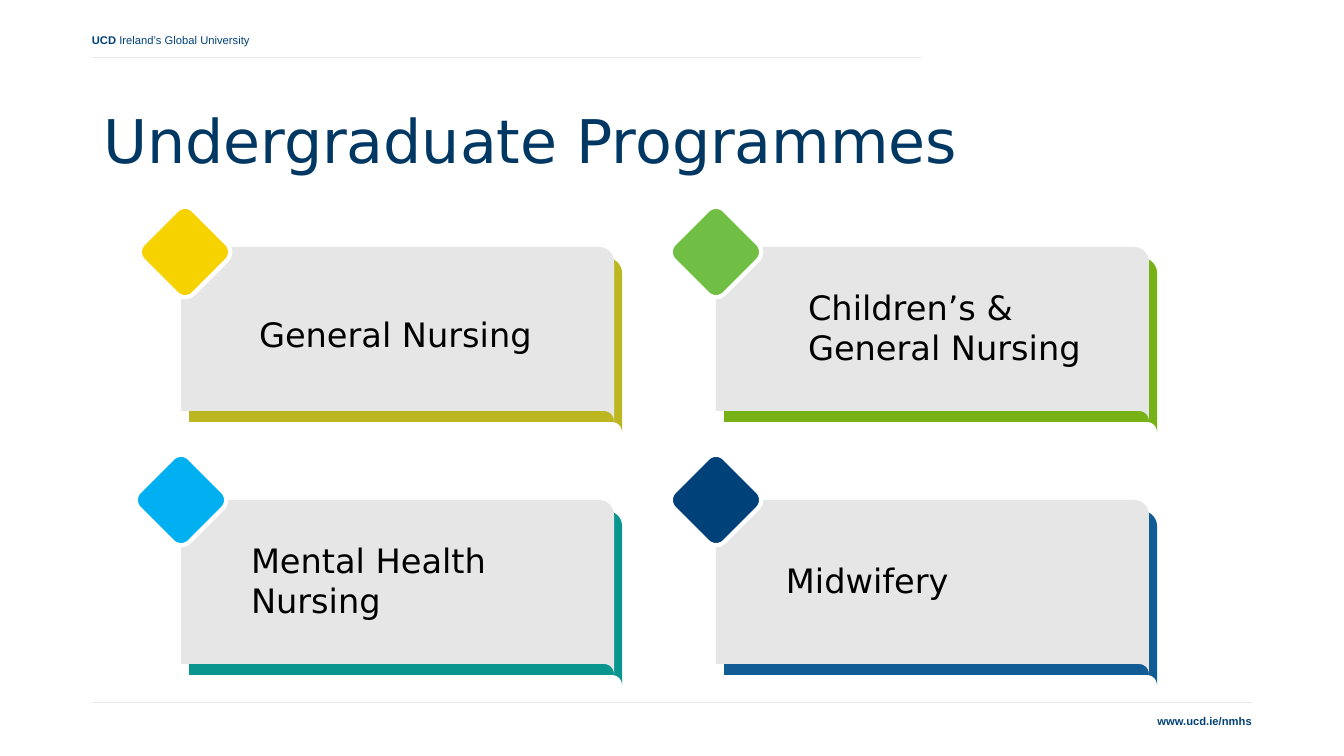
import math
from dataclasses import dataclass

import pptx
import pptx.dml.color
import pptx.enum.shapes
import pptx.enum.text
import pptx.oxml.ns
import pptx.util
from lxml import etree

EMU_PER_PX = 914400 / 100.8
SHAPES = pptx.enum.shapes.MSO_SHAPE
ANCHOR = pptx.enum.text.MSO_ANCHOR
ALIGN = pptx.enum.text.PP_ALIGN


@dataclass(frozen=True)
class Theme:
    brand: str = "004179"
    title: str = "003863"
    ink: str = "000000"
    panel: str = "E7E6E6"
    white: str = "FFFFFF"
    body_font: str = "DejaVu Sans"
    small_font: str = "Arial"
    title_size: int = 43
    label_size: int = 24
    small_size: int = 8
    rule_width: float = 0.5
    diamond_outline: int = 3


def px(length):
    return pptx.util.Emu(round(length * EMU_PER_PX))


def rgb(color):
    return pptx.dml.color.RGBColor.from_string(color)


def arc(center_x, center_y, radius, steps=12):
    """Points of a quarter circle from its top to its right-hand end."""
    angles = [math.pi / 2 * step / steps for step in range(steps + 1)]
    return [(center_x + radius * math.sin(angle), center_y - radius * math.cos(angle))
            for angle in angles]


class Page:
    def __init__(self, deck, theme):
        self.theme = theme
        self.slide = deck.slides.add_slide(deck.slide_layouts[5])
        self.shapes = self.slide.shapes

    def span(self, para, text, font, size, color, bold=False):
        span = para.add_run()
        span.text = text
        span.font.name = font
        span.font.size = pptx.util.Pt(size)
        span.font.bold = bold
        span.font.color.rgb = rgb(color)

    def frame(self, box, align=ALIGN.LEFT):
        """Set up the text frame of a box and return its first paragraph."""
        frame = box.text_frame
        frame.word_wrap = True
        frame.auto_size = pptx.enum.text.MSO_AUTO_SIZE.NONE
        frame.vertical_anchor = ANCHOR.MIDDLE
        para = frame.paragraphs[0]
        para.alignment = align
        return para

    def title(self, text, left, top, width, height):
        box = self.shapes.title
        box.left, box.top, box.width, box.height = map(px, (left, top, width, height))
        para = self.frame(box)
        para.line_spacing = 0.9
        self.span(para, text, self.theme.body_font, self.theme.title_size, self.theme.title)

    def small_print(self, spans, left, top, align):
        """Header or footer text, given as (text, bold) pairs."""
        box = self.shapes.add_textbox(px(left), px(top), px(454), px(40))
        para = self.frame(box, align)
        for text, bold in spans:
            self.span(para, text, self.theme.small_font, self.theme.small_size,
                      self.theme.brand, bold)

    def label(self, text, left, top):
        box = self.shapes.add_textbox(px(left), px(top), px(303), px(74))
        para = self.frame(box)
        frame = box.text_frame
        frame.margin_left = frame.margin_right = px(13)
        frame.margin_top = frame.margin_bottom = px(13)
        self.span(para, text, self.theme.body_font, self.theme.label_size, self.theme.ink)

    def rule(self, left, right, y):
        line = self.shapes.add_connector(
            pptx.enum.shapes.MSO_CONNECTOR.STRAIGHT, px(left), px(y), px(right), px(y))
        line.line.color.rgb = rgb(self.theme.panel)
        line.line.width = pptx.util.Pt(self.theme.rule_width)
        etree.SubElement(line._element.spPr, pptx.oxml.ns.qn("a:effectLst"))

    def sheet(self, left, top, color):
        """Card outline with a rounded top right and a curled bottom right corner."""
        right, bottom = left + 433, top + 164
        points = [(left, top), (left, bottom)]
        points += arc(right - 10, bottom + 10, 10)
        points += reversed(arc(right - 15, top + 15, 15))
        (start_x, start_y), *others = [(px(x), px(y)) for x, y in points]
        builder = self.shapes.build_freeform(start_x, start_y, scale=1.0)
        builder.add_line_segments(others, close=True)
        self.paint(builder.convert_to_shape(), color).line.fill.background()

    def diamond(self, center_x, center_y, color):
        side = 71
        shape = self.shapes.add_shape(
            SHAPES.ROUNDED_RECTANGLE, px(center_x - side / 2), px(center_y - side / 2),
            px(side), px(side))
        shape.adjustments[0] = 0.17
        shape.rotation = 45
        self.paint(shape, color)
        shape.line.color.rgb = rgb(self.theme.white)
        shape.line.width = pptx.util.Pt(self.theme.diamond_outline)

    def paint(self, shape, color):
        shape.shadow.inherit = False
        shape.fill.solid()
        shape.fill.fore_color.rgb = rgb(color)
        return shape

    def card(self, left, top, edge_color):
        self.sheet(left + 8, top + 11, edge_color)
        self.sheet(left, top, self.theme.panel)


# text, label position, edge colour, diamond centre, diamond colour
PROGRAMMES = [
    ("General Nursing", (246, 297), "BCB621", (185, 252), "F6D200"),
    ("Children’s & General Nursing", (795, 290), "76B215", (716, 252), "71BE44"),
    ("Mental Health Nursing", (238, 543), "0A958E", (181, 500), "00B0F0"),
    ("Midwifery", (773, 543), "125C96", (716, 500), "004179"),
]


def main():
    deck = pptx.Presentation()
    deck.slide_width, deck.slide_height = px(1344), px(756)
    page = Page(deck, Theme())

    page.small_print([("UCD", True), (" Ireland’s Global University", False)],
                     82, 20, ALIGN.LEFT)
    page.rule(93, 921, 57)
    page.rule(93, 1252, 702)
    page.small_print([("www.ucd.ie/nmhs", True)], 808, 701, ALIGN.RIGHT)
    page.title("Undergraduate Programmes", 93, 71, 1159, 146)

    for index, (text, label_at, edge, center, color) in enumerate(PROGRAMMES):
        row, column = divmod(index, 2)
        page.card(181 + 535 * column, 247 + 253 * row, edge)
        page.label(text, *label_at)
        page.diamond(*center, color)

    deck.save("out.pptx")


if __name__ == "__main__":
    main()
